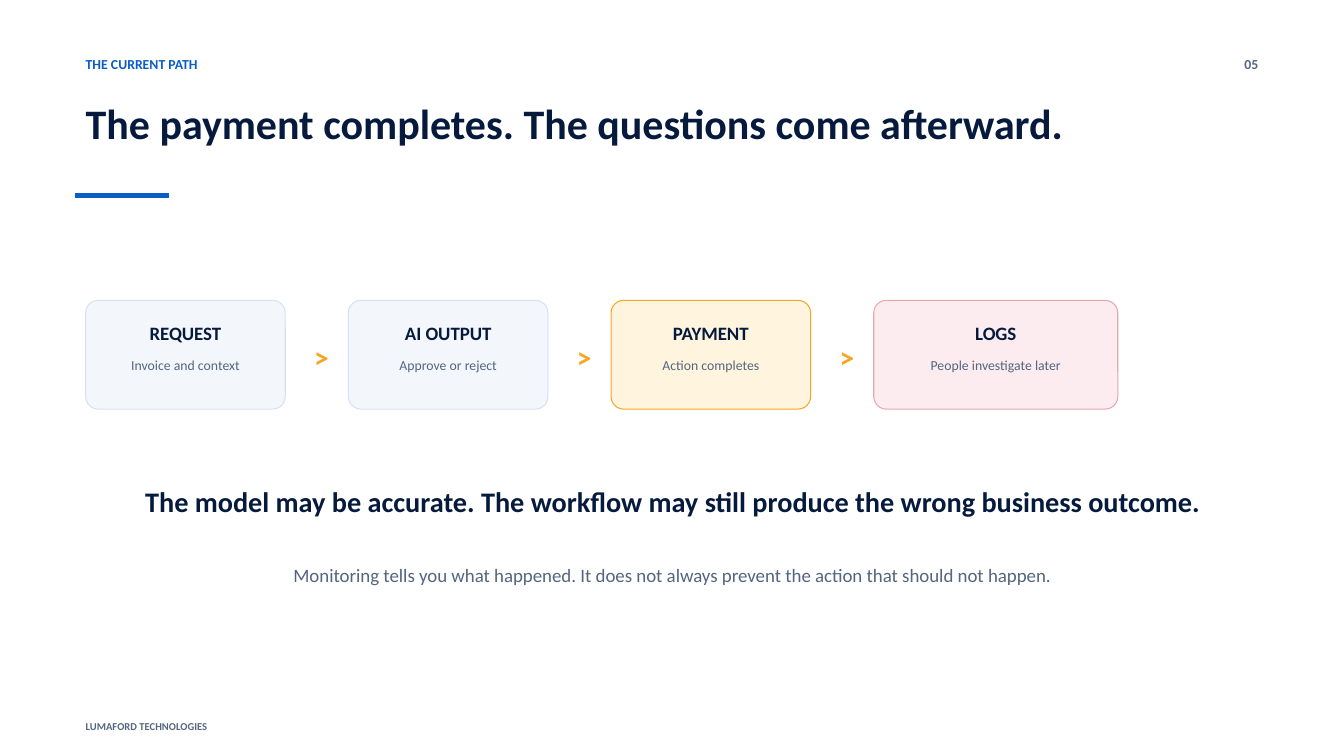
from pptx import Presentation
from pptx.dml.color import RGBColor
from pptx.enum.shapes import MSO_SHAPE
from pptx.enum.text import PP_ALIGN
from pptx.util import Cm, Pt

FONT = "Calibri"
NAVY, BLUE, GREY, AMBER = "061A3D", "075EC7", "53657F", "F5A623"
PALE, PALE_EDGE = "F3F7FC", "D7E1EF"
LEFT, CENTER, RIGHT = PP_ALIGN.LEFT, PP_ALIGN.CENTER, PP_ALIGN.RIGHT

# Title, detail, width in cm, fill, edge
STEPS = [
    ("REQUEST", "Invoice and context", 5.03, PALE, PALE_EDGE),
    ("AI OUTPUT", "Approve or reject", 5.03, PALE, PALE_EDGE),
    ("PAYMENT", "Action completes", 5.03, "FFF5DF", AMBER),
    ("LOGS", "People investigate later", 6.15, "FCECEF", "E5A7AF"),
]
STEP_PITCH = 6.62


def color(value):
    return RGBColor.from_string(value)


def add_text(page, left, top, width, height, text, size, ink, bold=False, align=LEFT):
    box = page.shapes.add_textbox(Cm(left), Cm(top), Cm(width), Cm(height))
    box.text_frame.word_wrap = True
    para = box.text_frame.paragraphs[0]
    para.alignment = align
    span = para.add_run()
    span.text = text
    span.font.name = FONT
    span.font.size = Pt(size)
    span.font.bold = bold
    span.font.color.rgb = color(ink)


def add_panel(page, kind, left, top, width, height, fill, edge, edge_width):
    panel = page.shapes.add_shape(kind, Cm(left), Cm(top), Cm(width), Cm(height))
    panel.shadow.inherit = False
    panel.fill.solid()
    panel.fill.fore_color.rgb = color(fill)
    panel.line.color.rgb = color(edge)
    panel.line.width = Pt(edge_width)
    return panel


def add_header(page, left, top, width):
    add_text(page, left, top, 20.12, 0.64, "THE CURRENT PATH", 9.8, BLUE, True)
    add_text(page, left + width - 1.27, top, 1.27, 0.64, "05", 9.8, GREY, True, RIGHT)
    add_text(page, left, top + 1.06, width, 2.44,
             "The payment completes. The questions come afterward.", 30, NAVY, True)
    add_panel(page, MSO_SHAPE.RECTANGLE, left, top + 3.6, 2.33, 0.11, BLUE, BLUE, 0)


def add_step(page, left, top, width, height, title, detail, fill, edge):
    card = add_panel(page, MSO_SHAPE.ROUNDED_RECTANGLE, left, top, width, height,
                     fill, edge, 0.75)
    card.adjustments[0] = 0.115
    inset = 0.42
    inner = width - 2 * inset
    add_text(page, left + inset, top + 0.41, inner, 0.79, title, 13.5, NAVY, True, CENTER)
    add_text(page, left + inset, top + 1.3, inner, 1.22, detail, 9.8, GREY, False, CENTER)


def add_flow(page, left, top, height):
    for index, (title, detail, width, fill, edge) in enumerate(STEPS):
        step_left = left + index * STEP_PITCH
        add_step(page, step_left, top, width, height, title, detail, fill, edge)
        # Marker towards the next step
        if index < len(STEPS) - 1:
            add_text(page, step_left + width + 0.48, top + 0.84, 0.79, 1.02,
                     ">", 21, AMBER, True, CENTER)


def add_takeaway(page, left, top, width):
    add_text(page, left, top, width, 1.65,
             "The model may be accurate. The workflow may still produce "
             "the wrong business outcome.", 20.2, NAVY, True, CENTER)
    add_text(page, left + 0.9, top + 2.01, width - 1.8, 1.42,
             "Monitoring tells you what happened. It does not always prevent "
             "the action that should not happen.", 13.5, GREY, False, CENTER)


def add_footer(page, left, top, width):
    add_text(page, left, top, width, 0.48, "LUMAFORD TECHNOLOGIES", 7.5, GREY, True)


def main():
    deck = Presentation()
    deck.slide_width, deck.slide_height = Cm(33.87), Cm(19.05)
    page = deck.slides.add_slide(deck.slide_layouts[6])
    page.background.fill.solid()
    page.background.fill.fore_color.rgb = color("FFFFFF")
    add_header(page, 1.91, 1.27, 30.05)
    add_flow(page, 2.16, 7.57, 2.74)
    add_takeaway(page, 3.07, 12.07, 27.74)
    add_footer(page, 1.91, 18.03, 11.13)
    deck.save("out.pptx")


if __name__ == "__main__":
    main()
